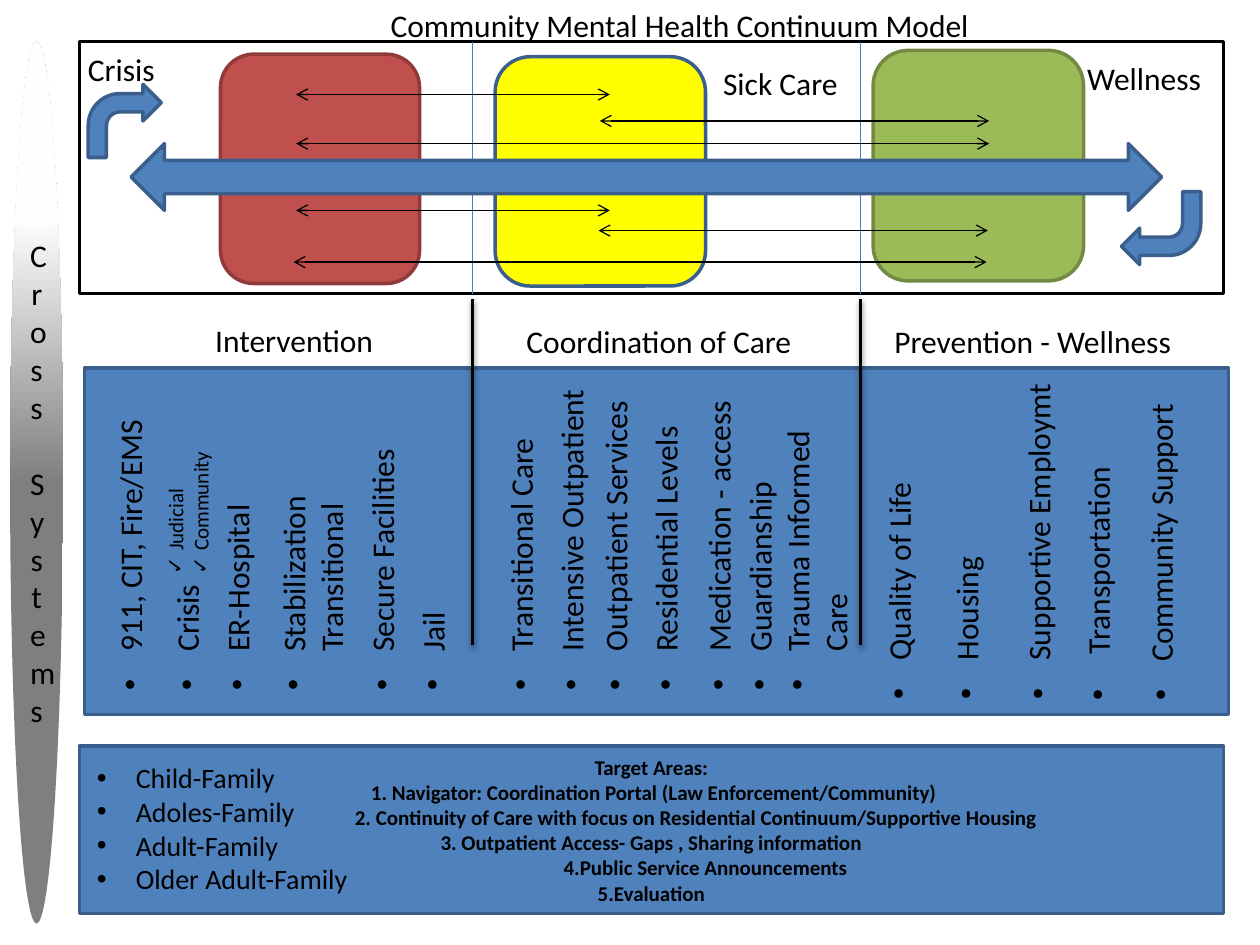
from lxml import etree
from pptx import Presentation
from pptx import util as u
from pptx.dml.color import RGBColor
from pptx.enum import shapes, text
from pptx.oxml import ns

BLUE, NAVY, BLACK, WHITE = "4F81BD", "3A5F8C", "000000", "FFFFFF"
FULL = text.MSO_AUTO_SIZE.SHAPE_TO_FIT_TEXT
FIXED = text.MSO_AUTO_SIZE.NONE
CENTER = text.PP_ALIGN.CENTER


def color(value):
    return RGBColor.from_string(value)


def child(parent, tag, **attributes):
    return etree.SubElement(parent, ns.qn(f"a:{tag}"), attributes)


def write(frame, lines, **common):
    for i, line in enumerate(lines):
        words, own = line if isinstance(line, tuple) else (line, {})
        style = {**common, **own}
        paragraph = frame.paragraphs[0] if i == 0 else frame.add_paragraph()
        paragraph.alignment = style.get("align", text.PP_ALIGN.LEFT)
        indent = style.get("indent", 0)
        properties = paragraph._p.get_or_add_pPr()
        properties.set("marL", str(u.Inches(indent)))
        if style.get("bullet"):
            properties.set("indent", str(-u.Inches(indent)))
            child(properties, "buFont", typeface="Arial")
            child(properties, "buChar", char=style["bullet"])
        if "before" in style:
            paragraph.space_before = u.Pt(style["before"])
        run = paragraph.add_run()
        run.text = words
        run.font.name = "Calibri"
        run.font.size = u.Pt(style.get("size", 18))
        run.font.bold = style.get("bold", False)
        run.font.color.rgb = color(BLACK)


class Board:
    def __init__(self, slide):
        self.slide = slide
        self.shapes = slide.shapes

    def title(self, words, left, top, width, height):
        title = self.shapes.title
        self.shapes.element.append(title.element)
        self.place(title, left, top, width, height)
        title.text_frame.word_wrap = False
        title.text_frame.auto_size = FULL
        write(title.text_frame, [words])

    def place(self, item, left, top, width, height):
        item.left, item.top = u.Inches(left), u.Inches(top)
        item.width, item.height = u.Inches(width), u.Inches(height)

    def shape(self, kind, left, top, width, height, fill=BLUE, line=NAVY, rotation=0):
        shape = self.shapes.add_shape(
            kind, u.Inches(left), u.Inches(top), u.Inches(width), u.Inches(height))
        shape.shadow.inherit = False
        shape.rotation = rotation
        shape.fill.solid()
        shape.fill.fore_color.rgb = color(fill)
        if line:
            shape.line.color.rgb = color(line)
            shape.line.width = u.Pt(2)
        else:
            shape.line.fill.background()
        return shape

    def fade(self, shape, stops):
        shape.fill.background()
        properties = shape.element.spPr
        gradient = etree.Element(ns.qn("a:gradFill"), rotWithShape="1")
        stop_list = child(gradient, "gsLst")
        for position, value in stops:
            stop = child(stop_list, "gs", pos=str(position * 1000))
            child(stop, "srgbClr", val=value)
        circle = child(gradient, "path", path="circle")
        child(circle, "fillToRect", l="50000", t="-80000", r="50000", b="180000")
        properties.replace(properties.find(ns.qn("a:noFill")), gradient)

    def label(self, lines, left, top, width, height, rotation=0, fixed=False, **style):
        box = self.shapes.add_textbox(
            u.Inches(left), u.Inches(top), u.Inches(width), u.Inches(height))
        box.rotation = rotation
        box.text_frame.word_wrap = fixed
        box.text_frame.auto_size = FIXED if fixed else FULL
        write(box.text_frame, lines, **style)

    def upright(self, lines, center, length, thickness=0.4, bottom=5.58, **style):
        style = {"bullet": "•", "indent": 0.31, **style}
        middle = bottom - length / 2
        self.label(lines, center - length / 2, middle - thickness / 2,
                   length, thickness, rotation=270, **style)

    def line(self, x1, y1, x2, y2, stroke=BLACK, width=0.75, arrows=False, shadow=False):
        line = self.shapes.add_connector(
            shapes.MSO_CONNECTOR.STRAIGHT,
            u.Inches(x1), u.Inches(y1), u.Inches(x2), u.Inches(y2))
        line.line.color.rgb = color(stroke)
        line.line.width = u.Pt(width)
        properties = line.element.spPr
        if arrows:
            outline = properties.find(ns.qn("a:ln"))
            child(outline, "headEnd", type="arrow")
            child(outline, "tailEnd", type="arrow")
        effects = child(properties, "effectLst")
        if shadow:
            cast = child(effects, "outerShdw", blurRad=str(u.Pt(3.1)), dist=str(u.Pt(1.6)),
                         dir="5400000", rotWithShape="0")
            child(child(cast, "srgbClr", val=BLACK), "alpha", val="38000")


def main():
    deck = Presentation()
    deck.slide_width, deck.slide_height = u.Inches(10), u.Inches(7.5)
    board = Board(deck.slides.add_slide(deck.slide_layouts[5]))
    kind = shapes.MSO_SHAPE
    dividers = (3.75, 6.83)

    board.shape(kind.RECTANGLE, 0.63, 0.33, 9.08, 2, WHITE, BLACK)
    targets = board.shape(kind.RECTANGLE, 0.63, 5.92, 9.08, 1.33)
    write(targets.text_frame, [
        "Target Areas:",
        ("1. Navigator: Coordination Portal (Law Enforcement/Community)", {"indent": 0.04}),
        ("2. Continuity of Care with focus on Residential Continuum/Supportive Housing",
         {"indent": 0.71}),
        "3. Outpatient Access- Gaps , Sharing information",
        ("4.Public Service Announcements", {"indent": 0.86}),
        "5.Evaluation",
    ], size=12, bold=True, align=CENTER)

    systems = board.shape(kind.OVAL, 0.08, 0.33, 0.42, 7, line=None)
    board.fade(systems, [(0, WHITE), (40, "FEFEFE"), (100, "7F7F7F")])
    write(systems.text_frame, ["Cross", ("Systems", {"before": 22})], align=CENTER)

    board.label(["Crisis"], 0.6, 0.35, 0.74, 0.4)
    board.title("Community Mental Health Continuum Model", 3, 0, 4.85, 0.4)
    board.label(["Sick Care"], 5.64, 0.46, 1.12, 0.4)
    board.label(["Child-Family", "Adoles-Family", "Adult-Family", "Older Adult-Family"],
                0.67, 5.99, 2.22, 1.18, size=16, bullet="•", indent=0.31)
    board.label(["Wellness"], 8.53, 0.42, 1.11, 0.4)

    for x in dividers:
        board.line(x, 2.33, x, 0.33, "4B7EBC")
    board.shape(kind.ROUNDED_RECTANGLE, 6.93, 0.4, 1.67, 1.83, "9BBB59", "738A42")
    board.shape(kind.ROUNDED_RECTANGLE, 1.75, 0.43, 1.58, 1.82, "C0504D", "8E3B39")
    board.shape(kind.ROUNDED_RECTANGLE, 3.93, 0.45, 1.67, 1.82, "FFFF00")
    board.shape(kind.LEFT_RIGHT_ARROW, 1.04, 1.14, 8.18, 0.53)

    for heading, left, top, width in [
        ("Intervention", 1.61, 2.5, 1.47),
        ("Prevention - Wellness", 7, 2.51, 2.42),
        ("Coordination of Care", 4.08, 2.51, 2.33),
    ]:
        board.label([heading], left, top, width, 0.4)
    board.shape(kind.RECTANGLE, 0.67, 2.92, 9.08, 2.75)
    for x in dividers:
        board.line(x, 2.37, x, 5.12, width=2, shadow=True)

    for service, center, length in [
        ("911, CIT, Fire/EMS", 1.03, 2.37),
        ("Crisis", 1.48, 1.05),
        ("ER-Hospital", 1.88, 1.69),
        ("Secure Facilities", 3.03, 2.43),
        ("Jail", 3.43, 0.83),
        ("Transitional Care", 4.13, 2.23),
        ("Intensive Outpatient", 4.53, 2.62),
        ("Outpatient Services", 4.88, 2.53),
        ("Residential Levels", 5.28, 2.33),
        ("Medication - access", 5.7, 2.53),
    ]:
        board.upright([service], center, length)
    plain = {"bullet": None}
    board.upright(["Stabilization", ("Transitional", plain)], 2.48, 1.82, 0.71)
    board.upright(["Guardianship", "Trauma Informed", ("Care", plain)], 6.33, 2.29, 1.01)
    board.upright(["Quality of Life", ("Housing", {"before": 17}),
                   ("Supportive Employmt", {"before": 19.5})],
                  7.82, 2.73, 1.78, bottom=5.65, fixed=True)
    board.upright(["Transportation"], 8.71, 2.08, bottom=5.66, indent=0.37)
    board.upright(["Community Support"], 9.21, 2.59, bottom=5.66)
    board.upright(["Judicial", "Community"], 1.49, 1.19, 0.5, bottom=4.66,
                  size=12, bullet="✓", indent=0.19)

    board.shape(kind.BENT_ARROW, 0.7, 0.67, 0.58, 0.58)
    board.shape(kind.BENT_ARROW, 8.9, 1.52, 0.63, 0.58, rotation=180)
    for start, end, y in [
        (2.35, 4.84, 0.75), (4.76, 7.85, 0.96), (2.35, 7.85, 1.14),
        (2.35, 4.84, 1.67), (4.75, 7.84, 1.83), (2.33, 7.83, 2.08),
    ]:
        board.line(start, y, end, y, arrows=True)

    deck.save("out.pptx")


if __name__ == "__main__":
    main()
